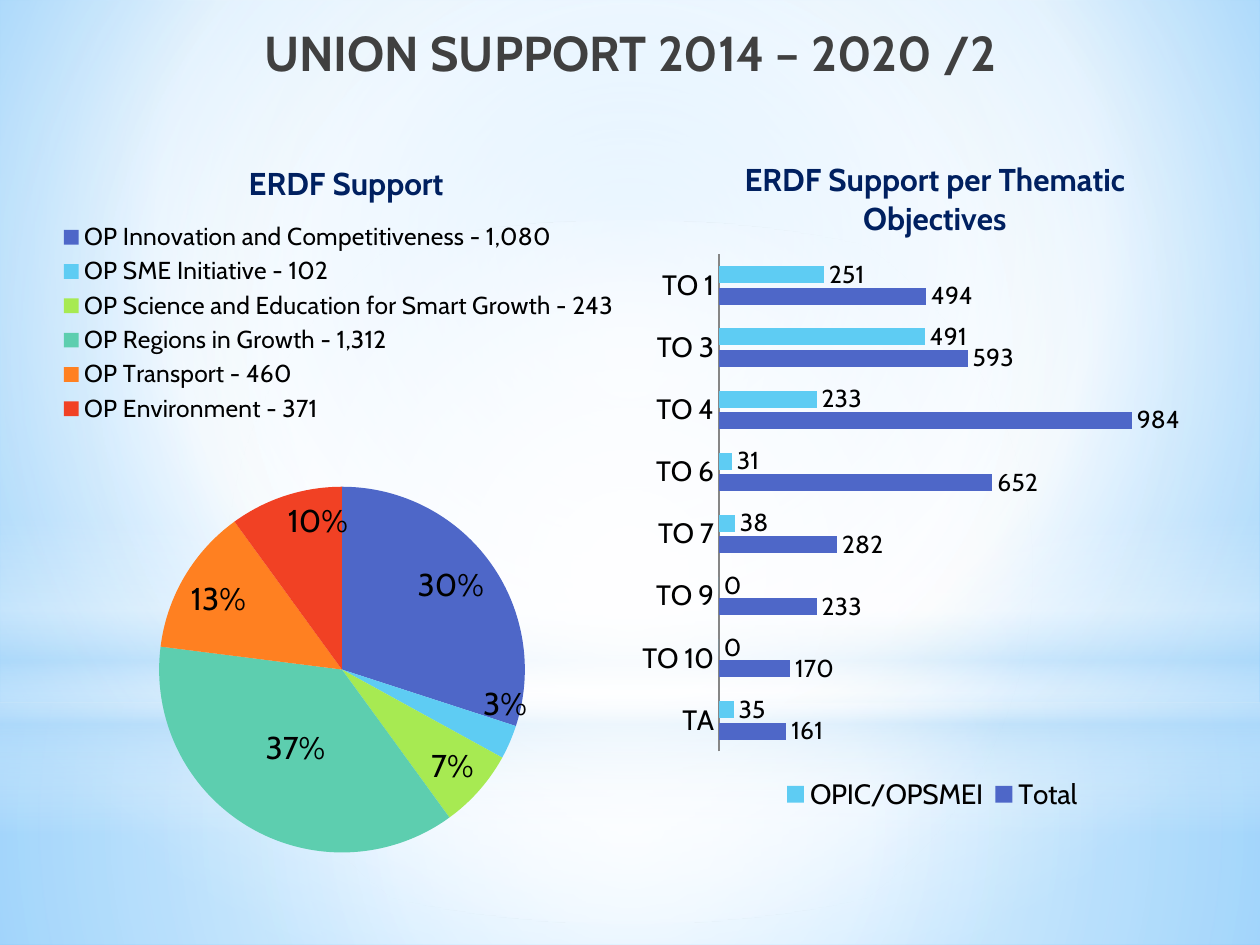
from dataclasses import dataclass
from typing import NamedTuple

from lxml import etree
from pptx import Presentation
from pptx.chart.chart import Chart
from pptx.chart.data import CategoryChartData
from pptx.dml.color import RGBColor
from pptx.enum.chart import XL_CHART_TYPE, XL_LABEL_POSITION, XL_LEGEND_POSITION, XL_TICK_MARK
from pptx.enum.shapes import MSO_SHAPE
from pptx.enum.text import MSO_ANCHOR, PP_ALIGN
from pptx.oxml import parse_xml
from pptx.oxml.ns import qn
from pptx.util import Cm, Pt

PIE, BAR = XL_CHART_TYPE.PIE, XL_CHART_TYPE.BAR_CLUSTERED
LEGEND_TOP, LEGEND_BOTTOM = XL_LEGEND_POSITION.TOP, XL_LEGEND_POSITION.BOTTOM
INSIDE_END, CENTER = XL_LABEL_POSITION.INSIDE_END, XL_LABEL_POSITION.CENTER
OUTSIDE_END = XL_LABEL_POSITION.OUTSIDE_END
RECTANGLE, OVAL = MSO_SHAPE.RECTANGLE, MSO_SHAPE.OVAL
TITLE_ONLY_LAYOUT = 5
DRAWING_NS = "http://schemas.openxmlformats.org/drawingml/2006/main"


@dataclass(frozen=True)
class Theme:
    font: str = "Cabin"
    heading: str = "404040"
    chart_title: str = "002060"
    text: str = "000000"
    axis: str = "868686"
    accents: tuple = ("4E67C8", "5ECCF3", "A7EA52", "5DCEAF", "FF8021", "F14124")
    heading_size: int = 28
    base_size: int = 18
    axis_size: int = 16
    small_size: int = 14


THEME = Theme()


class Box(NamedTuple):
    left: float
    top: float
    width: float
    height: float


class Stop(NamedTuple):
    position: int
    color: str
    opacity: int = 100


class Glow(NamedTuple):
    """A gradient; focus gives left, top, right, bottom insets, or None for top to bottom."""
    stops: tuple
    focus: tuple | None = (50, 50, 50, 50)


class Layer(NamedTuple):
    kind: int
    box: Box
    glow: Glow


class ChartSpec(NamedTuple):
    kind: int
    box: Box
    title: str
    categories: tuple
    series: dict
    legend: int
    legend_size: int
    title_at: tuple
    legend_at: tuple
    plot_at: tuple


BACKDROP = Glow((Stop(0, "9ED5FF"), Stop(60, "FFFFFF"), Stop(100, "5BB9FF")), (20, 10, 20, 60))
LAYERS = (
    Layer(RECTANGLE, Box(0, 14.17, 25.4, 4.88), Glow(
        (Stop(0, "FFFFFF", 91), Stop(37, "FFFFFF", 76), Stop(100, "B4DCFA", 79)))),
    Layer(RECTANGLE, Box(0, 0, 25.4, 14.17), Glow(
        (Stop(0, "FFFFFF", 89), Stop(48, "FFFFFF", 62), Stop(100, "B4DCFA", 79)))),
    Layer(RECTANGLE, Box(0, 10.46, 25.4, 6.35), Glow(
        (Stop(0, "FFFFFF", 0), Stop(29, "FFFFFF", 30), Stop(45, "B4DCFA", 40),
         Stop(55, "FFFFFF", 26), Stop(65, "B4DCFA", 60), Stop(100, "FFFFFF", 0)), None)),
    Layer(OVAL, Box(0, 4.45, 25.4, 14.17), Glow((Stop(0, "FFFFFF"), Stop(56, "FFFFFF", 0)))),
)
SUPPORT = ChartSpec(
    PIE, Box(0.79, 2.51, 12.09, 15.7), "ERDF Support",
    ("OP Innovation and Competitiveness - 1,080", "OP SME Initiative - 102",
     "OP Science and Education for Smart Growth - 243", "OP Regions in Growth - 1,312",
     "OP Transport - 460", "OP Environment - 371"),
    {"ERDF Support": (30, 3, 7, 37, 13, 10)}, LEGEND_TOP, THEME.small_size,
    (0.34, 0.04), (0.03, 0.12, 0.94, 0.27), (0.2, 0.465, 0.61, 0.47))
OBJECTIVES = ChartSpec(
    BAR, Box(12.7, 2.51, 12.19, 14), "ERDF Support per Thematic Objectives",
    ("TA", "TO 10", "TO 9", "TO 7", "TO 6", "TO 4", "TO 3", "TO 1"),
    {"Total": (161, 170, 233, 282, 652, 984, 593, 494),
     "OPIC/OPSMEI": (35, 0, 0, 38, 31, 233, 491, 251)}, LEGEND_BOTTOM, THEME.axis_size,
    (0.18, 0.04), (0.24, 0.94, 0.52, 0.06), (0.147, 0.187, 0.833, 0.716))


def lengths(box: Box) -> list:
    return [Cm(value) for value in box]


def style_font(font, size: int, color: str = THEME.text, bold: bool = False) -> None:
    font.name, font.size, font.bold = THEME.font, Pt(size), bold
    font.color.rgb = RGBColor.from_string(color)


def apply_glow(fill, owner, glow: Glow) -> None:
    """Swap the solid fill of owner (a shape or page element) for the gradient."""
    fill.solid()
    solid = owner.xpath("./p:spPr/a:solidFill | ./p:cSld/p:bg/p:bgPr/a:solidFill")[0]
    stops = "".join(
        f'<a:gs pos="{stop.position * 1000}"><a:srgbClr val="{stop.color}">'
        f'<a:alpha val="{stop.opacity * 1000}"/></a:srgbClr></a:gs>' for stop in glow.stops)
    if glow.focus is None:
        direction = '<a:lin ang="5400000" scaled="0"/>'
    else:
        insets = " ".join(f'{side}="{inset * 1000}"' for side, inset in zip("ltrb", glow.focus))
        direction = f'<a:path path="circle"><a:fillToRect {insets}/></a:path>'
    solid.getparent().replace(solid, parse_xml(
        f'<a:gradFill xmlns:a="{DRAWING_NS}" rotWithShape="1"><a:gsLst>{stops}</a:gsLst>'
        f'{direction}</a:gradFill>'))


def place(element, index: int, fractions: tuple, inner: bool = False, offset: bool = False) -> None:
    """Give a chart part a manual layout in fractions of the chart."""
    for old in element.findall(qn("c:layout")):
        element.remove(old)
    layout = etree.Element(qn("c:layout"))
    manual = etree.SubElement(layout, qn("c:manualLayout"))
    if inner:
        etree.SubElement(manual, qn("c:layoutTarget"), val="inner")
    if not offset:
        for mode in ("xMode", "yMode"):
            etree.SubElement(manual, qn(f"c:{mode}"), val="edge")
    for name, value in zip("xywh", fractions):
        etree.SubElement(manual, qn(f"c:{name}"), val=str(value))
    element.insert(index, layout)


def add_chart(page, item: ChartSpec) -> Chart:
    data = CategoryChartData()
    data.categories = item.categories
    for name, values in item.series.items():
        data.add_series(name, values)
    chart = page.shapes.add_chart(item.kind, *lengths(item.box), data).chart
    style_font(chart.font, THEME.base_size)
    chart.has_title = chart.has_legend = True
    para = chart.chart_title.text_frame.paragraphs[0]
    para.text = item.title
    style_font(para.font, THEME.base_size, THEME.chart_title, True)
    chart.legend.position = item.legend
    chart.legend.include_in_layout = False
    style_font(chart.legend.font, item.legend_size)
    root = chart.element
    place(root.xpath(".//c:chart/c:title")[0], 1, item.title_at)
    place(root.xpath(".//c:legend")[0], 1, item.legend_at)
    place(root.xpath(".//c:plotArea")[0], 0, item.plot_at, inner=True)
    return chart


def format_pie(chart: Chart) -> None:
    plot = chart.plots[0]
    plot.vary_by_categories = True
    series = plot.series[0]
    for index, color in enumerate(THEME.accents):
        fill = series.points[index].format.fill
        fill.solid()
        fill.fore_color.rgb = RGBColor.from_string(color)
    labels = series.data_labels
    labels.show_percentage, labels.show_value = True, False
    labels.number_format, labels.number_format_is_linked = "0%", False
    labels.position = INSIDE_END
    style_font(labels.font, THEME.base_size)
    for index, position in ((1, INSIDE_END), (3, CENTER)):
        label = series.points[index].data_label
        label.position = position
        style_font(label.font, THEME.base_size)
    for element in chart.element.xpath(".//c:dLbl"):
        element.find(qn("c:showVal")).set("val", "0")
        element.find(qn("c:showPercent")).set("val", "1")
    place(chart.element.xpath(".//c:dLbl[c:idx/@val='1']")[0], 1, (0.04, -0.02), offset=True)


def format_bars(chart: Chart) -> None:
    plot = chart.plots[0]
    plot.vary_by_categories = False
    plot.gap_width, plot.overlap = 140, -25
    for series, color in zip(plot.series, THEME.accents):
        series.format.fill.solid()
        series.format.fill.fore_color.rgb = RGBColor.from_string(color)
        labels = series.data_labels
        labels.show_value, labels.position = True, OUTSIDE_END
        style_font(labels.font, THEME.small_size)
    axis = chart.category_axis
    axis.major_tick_mark = axis.minor_tick_mark = XL_TICK_MARK.NONE
    axis.format.line.color.rgb = RGBColor.from_string(THEME.axis)
    style_font(axis.tick_labels.font, THEME.axis_size)
    scale = chart.value_axis
    scale.minimum_scale, scale.maximum_scale = 0, 1200
    scale.has_major_gridlines = scale.visible = False


def main() -> None:
    deck = Presentation()
    deck.slide_width, deck.slide_height = Cm(25.4), Cm(19.05)
    page = deck.slides.add_slide(deck.slide_layouts[TITLE_ONLY_LAYOUT])
    apply_glow(page.background.fill, page.element, BACKDROP)
    for layer in LAYERS:
        shape = page.shapes.add_shape(layer.kind, *lengths(layer.box))
        shape.shadow.inherit = False
        shape.line.fill.background()
        apply_glow(shape.fill, shape.element, layer.glow)
    title = page.shapes.title
    title.left, title.top, title.width, title.height = lengths(Box(0, 0.33, 25.4, 1.45))
    title.text_frame.vertical_anchor = MSO_ANCHOR.MIDDLE
    para = title.text_frame.paragraphs[0]
    para.text, para.alignment = "UNION SUPPORT 2014 – 2020 /2", PP_ALIGN.CENTER
    style_font(para.font, THEME.heading_size, THEME.heading, True)
    title.element.getparent().append(title.element)  # bring in front of the glows
    format_pie(add_chart(page, SUPPORT))
    format_bars(add_chart(page, OBJECTIVES))
    deck.save("out.pptx")


if __name__ == "__main__":
    main()
